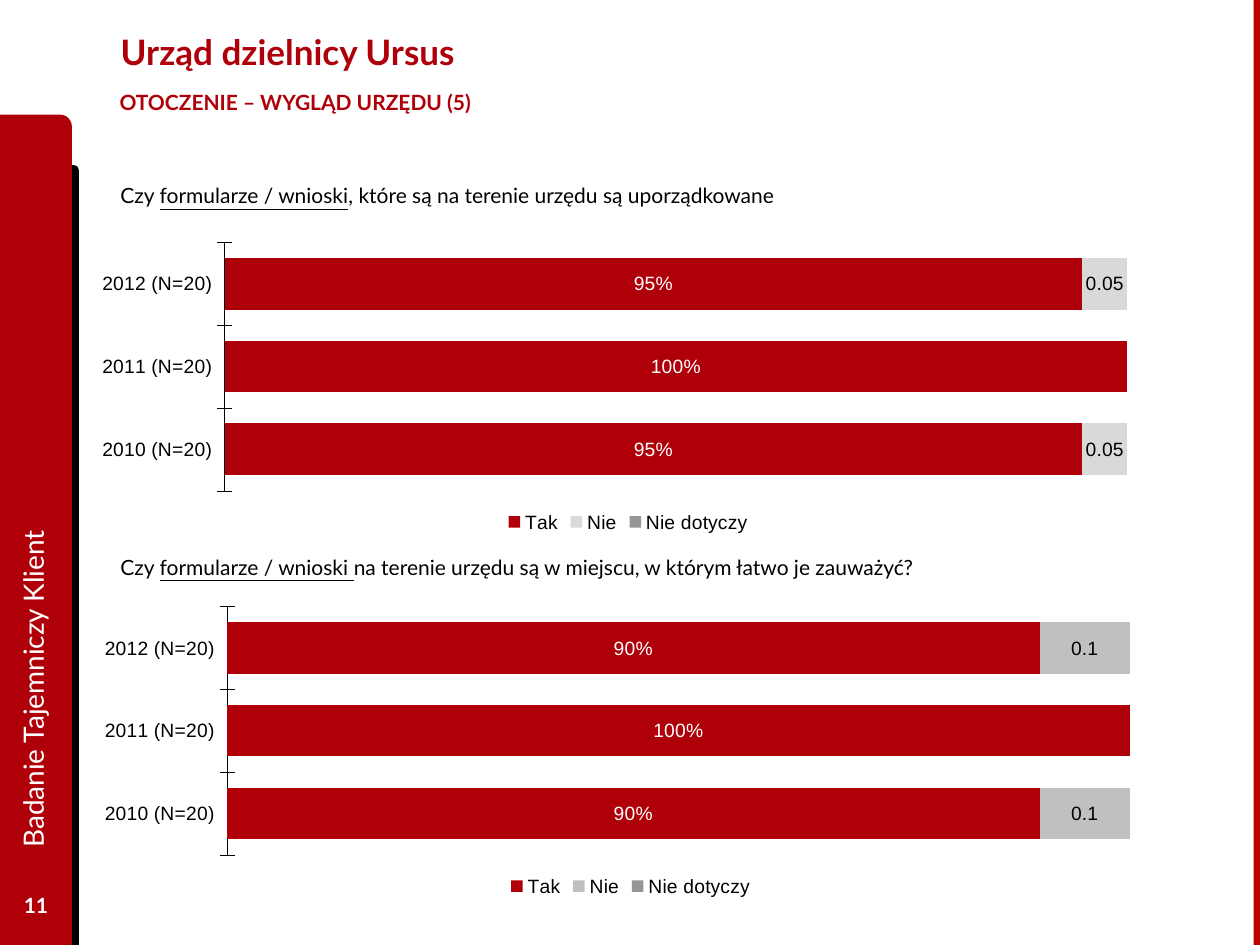
from pptx import Presentation
from pptx.chart.data import CategoryChartData
from pptx.dml.color import RGBColor
from pptx.enum.chart import XL_CHART_TYPE, XL_LEGEND_POSITION, XL_TICK_MARK
from pptx.enum.shapes import MSO_SHAPE
from pptx.enum.text import MSO_ANCHOR, PP_ALIGN
from pptx.oxml import parse_xml
from pptx.oxml.ns import nsdecls, qn
from pptx.util import Cm, Pt

STACKED_BAR = XL_CHART_TYPE.BAR_STACKED
LEGEND_BOTTOM = XL_LEGEND_POSITION.BOTTOM
TICK_CROSS = XL_TICK_MARK.CROSS
TICK_NONE = XL_TICK_MARK.NONE
RECTANGLE = MSO_SHAPE.RECTANGLE
ROUND_CORNER = MSO_SHAPE.ROUND_1_RECTANGLE
MIDDLE = MSO_ANCHOR.MIDDLE
TOP = MSO_ANCHOR.TOP
LEFT = PP_ALIGN.LEFT
CENTER = PP_ALIGN.CENTER

RED = RGBColor(0xAF, 0x00, 0x0A)
EDGE_RED = RGBColor(0xBD, 0x00, 0x00)
BLACK = RGBColor(0, 0, 0)
WHITE = RGBColor(0xFF, 0xFF, 0xFF)
LIGHT_GREY = RGBColor(0xD9, 0xD9, 0xD9)
MID_GREY = RGBColor(0xC0, 0xC0, 0xC0)
DARK_GREY = RGBColor(0x96, 0x96, 0x96)

TEXT_FONT = "Lato"
CHART_FONT = "Arial"
SLIDE_WIDTH, SLIDE_HEIGHT = 25.4, 19.05
CATEGORIES = ["2012 (N=20)", "2011 (N=20)", "2010 (N=20)"]


def format_font(font, size, color, name=TEXT_FONT, bold=False):
    font.name = name
    font.size = Pt(size)
    font.bold = bold
    font.color.rgb = color


def add_block(slide, preset, left, top, width, height, color):
    shape = slide.shapes.add_shape(preset, Cm(left), Cm(top), Cm(width), Cm(height))
    shape.shadow.inherit = False
    shape.fill.solid()
    shape.fill.fore_color.rgb = color
    shape.line.fill.background()


def add_text(slide, left, top, width, height, pieces, size, color,
             bold=False, anchor=TOP, alignment=LEFT):
    shape = slide.shapes.add_textbox(Cm(left), Cm(top), Cm(width), Cm(height))
    text_frame = shape.text_frame
    text_frame.word_wrap = True
    text_frame.vertical_anchor = anchor
    paragraph = text_frame.paragraphs[0]
    paragraph.alignment = alignment
    for piece in pieces:
        run = paragraph.add_run()
        run.text = piece
        format_font(run.font, size, color, bold=bold)
    return shape


def add_sidebar(slide, left, top, width):
    height = SLIDE_HEIGHT - top
    add_block(slide, ROUND_CORNER, left + 0.99, top + 1.02, 0.6, height - 1.02, BLACK)
    add_block(slide, ROUND_CORNER, left, top, width, height, RED)
    add_text(slide, left, top + 15.42, width, 1.02, ["11"], 12, WHITE,
             bold=True, anchor=MIDDLE, alignment=CENTER)
    label_length, label_height = 14.63, 1.3
    label = add_text(slide, left + 0.66 - label_length / 2, top + 7.06, label_length,
                     label_height, ["Badanie Tajemniczy Klient"], 16, WHITE, anchor=MIDDLE)
    label.rotation = 270


def add_heading(slide, left, top, width):
    title = slide.shapes.title
    title.left, title.top, title.width, title.height = Cm(left), Cm(top), Cm(width), Cm(1.83)
    title.text_frame.text = "Urząd dzielnicy Ursus"
    title.text_frame.vertical_anchor = MIDDLE
    paragraph = title.text_frame.paragraphs[0]
    paragraph.alignment = LEFT
    format_font(paragraph.runs[0].font, 20, RED, bold=True)
    subtitle = add_text(slide, left - 0.28, top + 1.55, 9.78, 0.84,
                        ["OTOCZENIE – WYGLĄD URZĘDU (5)"], 12, RED, bold=True)
    subtitle.text_frame.word_wrap = False
    subtitle.text_frame.margin_left = subtitle.text_frame.margin_right = Cm(0.51)


def set_plot_layout(chart, x, y, width, height):
    plot_area = chart.element.find(".//" + qn("c:plotArea"))
    for layout in plot_area.findall(qn("c:layout")):
        plot_area.remove(layout)
    sizes = {"x": x, "y": y, "w": width, "h": height}
    values = "".join(f'<c:{key} val="{value}"/>' for key, value in sizes.items())
    plot_area.insert(0, parse_xml(
        f'<c:layout {nsdecls("c")}><c:manualLayout><c:layoutTarget val="inner"/>'
        f'<c:xMode val="edge"/><c:yMode val="edge"/>{values}</c:manualLayout></c:layout>'))


def add_answer_chart(slide, left, top, width, height, yes, no, no_color):
    data = CategoryChartData()
    data.categories = CATEGORIES
    data.add_series("Tak", yes, number_format="0%")
    data.add_series("Nie", no)
    data.add_series("Nie dotyczy", [None] * len(CATEGORIES))
    chart = slide.shapes.add_chart(STACKED_BAR, Cm(left), Cm(top), Cm(width),
                                   Cm(height), data).chart
    format_font(chart.font, 11, BLACK, CHART_FONT)
    chart.has_title = False
    chart.has_legend = True
    chart.legend.position = LEGEND_BOTTOM
    chart.legend.include_in_layout = False

    plot = chart.plots[0]
    plot.gap_width = 60
    plot.overlap = 100
    plot.vary_by_categories = False
    colors = [(RED, WHITE), (no_color, BLACK), (DARK_GREY, BLACK)]
    for series, (fill_color, label_color) in zip(plot.series, colors):
        series.format.fill.solid()
        series.format.fill.fore_color.rgb = fill_color
        labels = series.data_labels
        labels.show_value = True
        format_font(labels.font, 11, label_color, CHART_FONT)
    percent_labels = plot.series[0].data_labels
    percent_labels.number_format = "0%"
    percent_labels.number_format_is_linked = False

    category_axis = chart.category_axis
    category_axis.reverse_order = True
    category_axis.major_tick_mark = TICK_CROSS
    category_axis.minor_tick_mark = TICK_NONE
    category_axis.format.line.color.rgb = BLACK
    category_axis.format.line.width = Pt(0.23)
    format_font(category_axis.tick_labels.font, 11, BLACK, CHART_FONT)
    value_axis = chart.value_axis
    value_axis.minimum_scale, value_axis.maximum_scale = 0, 1
    value_axis.major_unit = 0.2
    value_axis.has_major_gridlines = False
    value_axis.tick_labels.number_format = "0%"
    value_axis.tick_labels.number_format_is_linked = False
    value_axis.visible = False
    set_plot_layout(chart, 0.12, 0, 0.85, 0.84)


def add_question(slide, left, top, width, pieces, chart_left, chart_top, yes, no, no_color):
    question = add_text(slide, left, top, width, 0.76, pieces, 12, BLACK)
    question.text_frame.paragraphs[0].runs[1].font.underline = True
    add_answer_chart(slide, left + chart_left, top + chart_top, 21.41, 5.97,
                     yes, no, no_color)


def main():
    presentation = Presentation()
    presentation.slide_width = Cm(SLIDE_WIDTH)
    presentation.slide_height = Cm(SLIDE_HEIGHT)
    slide = presentation.slides.add_slide(presentation.slide_layouts[5])
    add_sidebar(slide, 0, 2.31, 1.45)
    add_block(slide, RECTANGLE, SLIDE_WIDTH - 0.13, 0, 0.13, SLIDE_HEIGHT, EDGE_RED)
    add_heading(slide, 2.18, 0.13, 19.74)
    add_question(slide, 2.18, 3.56, 14.81,
                 ["Czy ", "formularze / wnioski",
                  ", które są na terenie urzędu są uporządkowane"],
                 -0.22, 1.32, [0.95, 1, 0.95], [0.05, None, 0.05], LIGHT_GREY)
    add_question(slide, 2.18, 11.05, 19.99,
                 ["Czy ", "formularze / wnioski ",
                  "na terenie urzędu są w miejscu, w którym łatwo je zauważyć?"],
                 -0.17, 1.17, [0.9, 1, 0.9], [0.1, None, 0.1], MID_GREY)
    presentation.save("out.pptx")


if __name__ == "__main__":
    main()
